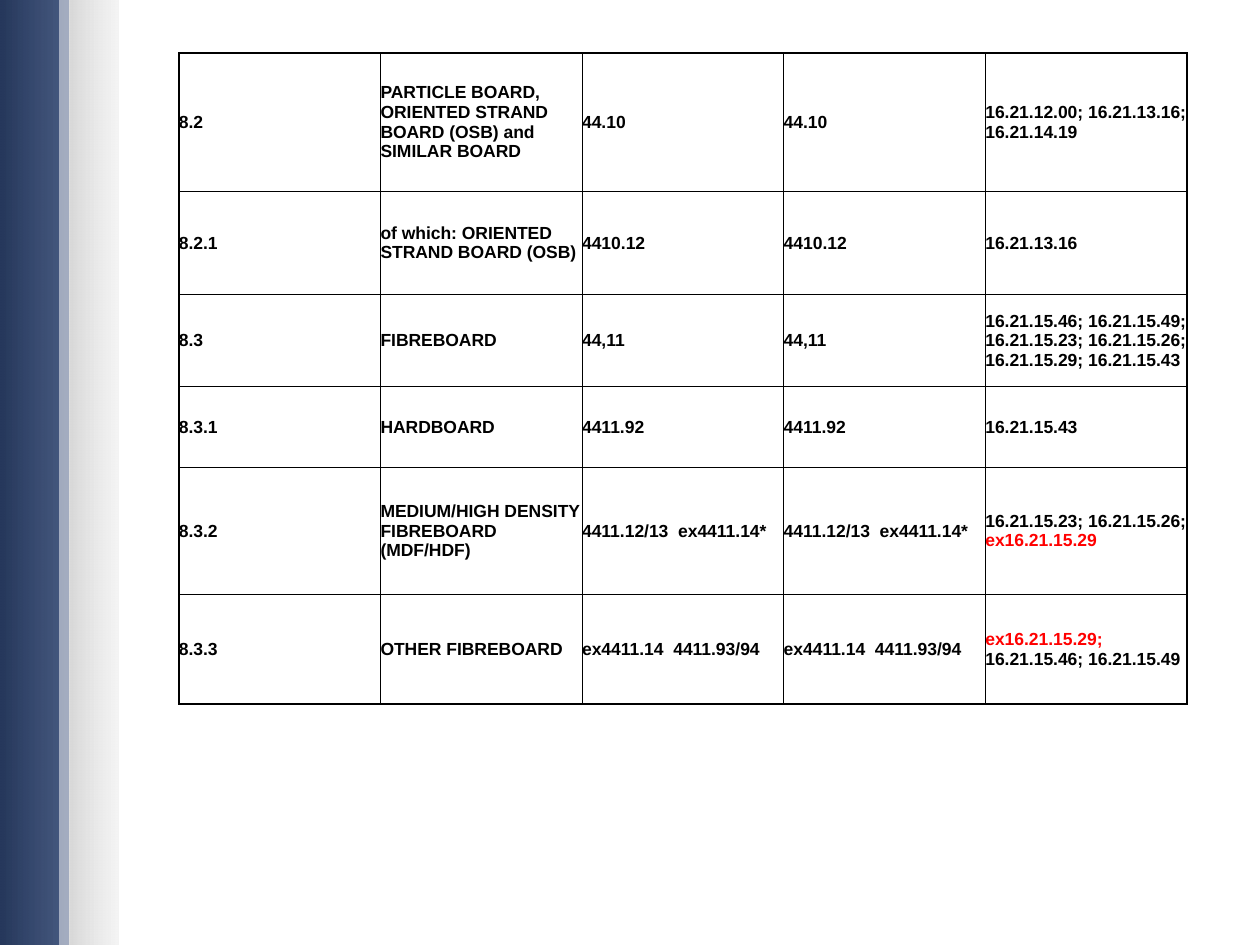
from dataclasses import dataclass

from lxml import etree
from pptx import Presentation
from pptx.dml.color import RGBColor
from pptx.enum.shapes import MSO_SHAPE
from pptx.enum.text import MSO_ANCHOR
from pptx.oxml.ns import qn
from pptx.util import Inches, Pt

RECTANGLE = MSO_SHAPE.RECTANGLE
MIDDLE = MSO_ANCHOR.MIDDLE
BLACK = "000000"
RED = "FF0000"
FONT = "Arial"
COLUMN_WIDTH = 1.6
INNER_LINE = 0.5
OUTER_LINE = 1


@dataclass
class Stop:
    color: str
    opacity: int = 100


@dataclass
class Band:
    left: float
    width: float
    stops: list[Stop]


@dataclass
class Span:
    text: str
    color: str = BLACK


@dataclass
class Product:
    number: str
    name: str
    trade_code: str
    production_codes: list[Span]
    height: float

    def cells(self) -> list[list[Span]]:
        labels = [self.number, self.name, self.trade_code, self.trade_code]
        return [[Span(label)] for label in labels] + [self.production_codes]


BANDS = [
    Band(0, 0.55, [Stop("344974", 90), Stop("26385C")]),
    Band(0.55, 0.39, [Stop("F2F2F2", 80), Stop("D9D9D9")]),
    Band(0.47, 0.08, [Stop("FFFFFF", 50)]),
]

PRODUCTS = [
    Product("8.2", "PARTICLE BOARD, ORIENTED STRAND BOARD (OSB) and SIMILAR BOARD", "44.10",
            [Span("16.21.12.00; 16.21.13.16; 16.21.14.19")], 1.1),
    Product("8.2.1", "of which: ORIENTED STRAND BOARD (OSB)", "4410.12",
            [Span("16.21.13.16")], 0.82),
    Product("8.3", "FIBREBOARD", "44,11",
            [Span("16.21.15.46; 16.21.15.49; 16.21.15.23; 16.21.15.26; "
                  "16.21.15.29; 16.21.15.43")], 0.73),
    Product("8.3.1", "HARDBOARD", "4411.92", [Span("16.21.15.43")], 0.64),
    Product("8.3.2", "MEDIUM/HIGH DENSITY FIBREBOARD (MDF/HDF)", "4411.12/13  ex4411.14*",
            [Span("16.21.15.23; 16.21.15.26; "), Span("ex16.21.15.29", RED)], 1.01),
    Product("8.3.3", "OTHER FIBREBOARD", "ex4411.14  4411.93/94",
            [Span("ex16.21.15.29; ", RED), Span("16.21.15.46; 16.21.15.49")], 0.87),
]


def rgb(color: str) -> RGBColor:
    return RGBColor.from_string(color)


def draw_band(page, band: Band, height) -> None:
    shape = page.shapes.add_shape(RECTANGLE, Inches(band.left), 0, Inches(band.width), height)
    shape.shadow.inherit = False
    shape.line.fill.background()
    if len(band.stops) == 1:
        shape.fill.solid()
        shape.fill.fore_color.rgb = rgb(band.stops[0].color)
    else:
        shape.fill.gradient()
        shape.fill.gradient_angle = 180
        for target, stop in zip(shape.fill.gradient_stops, band.stops):
            target.color.rgb = rgb(stop.color)
    for color, stop in zip(shape._element.spPr.iter(qn("a:srgbClr")), band.stops):
        if stop.opacity < 100:
            etree.SubElement(color, qn("a:alpha"), val=str(stop.opacity * 1000))


def add_border(cell, side: str, points: float) -> None:
    properties = cell._tc.get_or_add_tcPr()
    line = etree.SubElement(properties, qn(f"a:ln{side}"), w=str(Pt(points)))
    fill = etree.SubElement(line, qn("a:solidFill"))
    etree.SubElement(fill, qn("a:srgbClr"), val=BLACK)


def fill_cell(cell, spans: list[Span], outer_sides: dict[str, bool]) -> None:
    for side, outer in outer_sides.items():
        add_border(cell, side, OUTER_LINE if outer else INNER_LINE)
    cell.fill.background()
    cell.vertical_anchor = MIDDLE
    cell.margin_left = cell.margin_right = cell.margin_top = cell.margin_bottom = 0
    para = cell.text_frame.paragraphs[0]
    for span in spans:
        run = para.add_run()
        run.text = span.text
        run.font.name = FONT
        run.font.size = Pt(10)
        run.font.bold = True
        run.font.color.rgb = rgb(span.color)


def draw_table(page, products: list[Product]) -> None:
    rows = [product.cells() for product in products]
    column_count = len(rows[0])
    height = sum(product.height for product in products)
    table = page.shapes.add_table(
        len(rows), column_count, Inches(1.42), Inches(0.42),
        Inches(COLUMN_WIDTH * column_count), Inches(height)).table
    table.first_row = table.horz_banding = False
    for column in table.columns:
        column.width = Inches(COLUMN_WIDTH)
    for row_index, (product, cells) in enumerate(zip(products, rows)):
        table.rows[row_index].height = Inches(product.height)
        for column_index, spans in enumerate(cells):
            outer_sides = {
                "L": column_index == 0,
                "R": column_index == column_count - 1,
                "T": row_index == 0,
                "B": row_index == len(rows) - 1,
            }
            fill_cell(table.cell(row_index, column_index), spans, outer_sides)


def main() -> None:
    deck = Presentation()
    deck.slide_width = Inches(10)
    deck.slide_height = Inches(7.5)
    page = deck.slides.add_slide(deck.slide_layouts[6])
    page.background.fill.solid()
    page.background.fill.fore_color.rgb = rgb("FFFFFF")
    for band in BANDS:
        draw_band(page, band, deck.slide_height)
    draw_table(page, PRODUCTS)
    deck.save("out.pptx")


if __name__ == "__main__":
    main()
